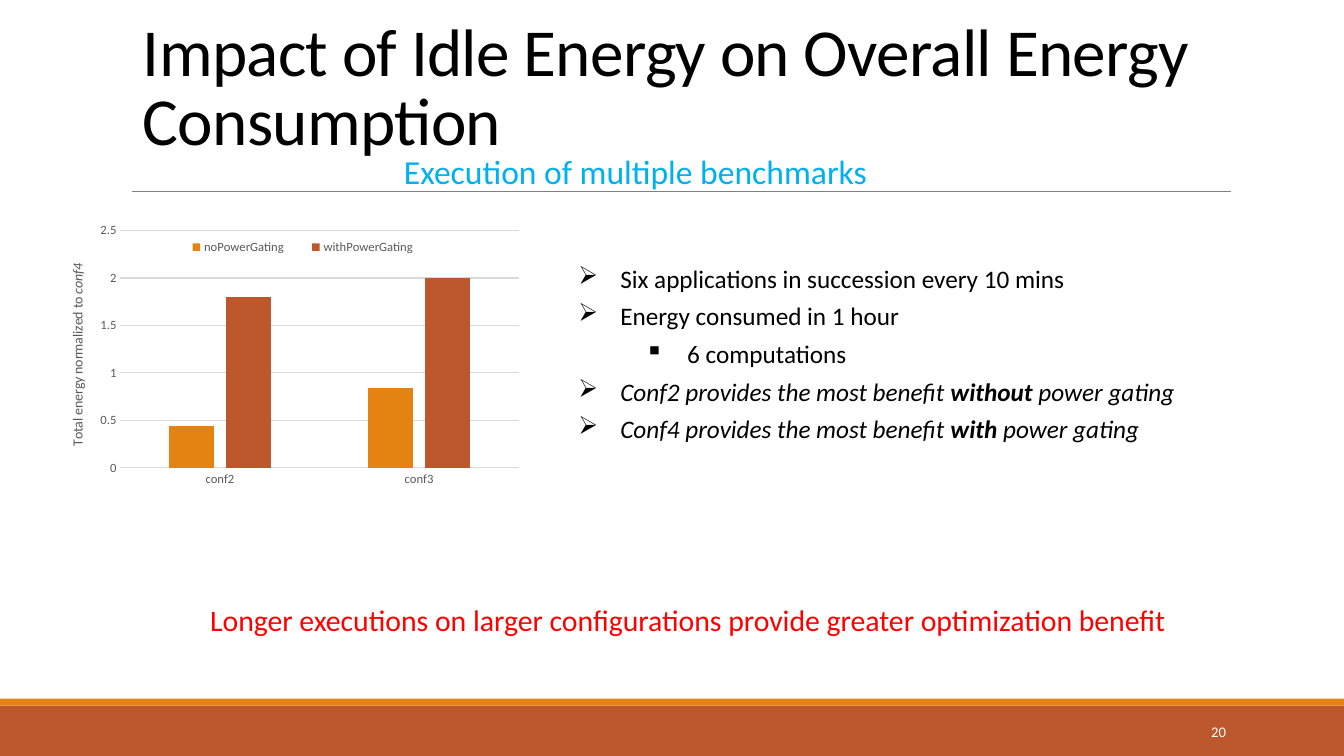
"""Build the slide on idle energy and overall energy consumption."""
from dataclasses import dataclass
from typing import Any, Optional

from lxml.etree import SubElement
from pptx import Presentation
from pptx.chart.data import CategoryChartData
from pptx.dml.color import RGBColor
from pptx.enum.chart import XL_CHART_TYPE as ChartType
from pptx.enum.chart import XL_LEGEND_POSITION as LegendPosition
from pptx.enum.chart import XL_TICK_MARK as TickMark
from pptx.enum.shapes import MSO_CONNECTOR as Connector
from pptx.enum.shapes import MSO_SHAPE as ShapeType
from pptx.enum.text import MSO_ANCHOR as Anchor
from pptx.enum.text import MSO_AUTO_SIZE as AutoSize
from pptx.enum.text import PP_ALIGN as Align
from pptx.oxml.ns import qn
from pptx.util import Pt

FONT = "Calibri"
COLORS = {
    "orange": "E48312", "rust": "BD582C", "rule": "808080", "sky": "00B0F0",
    "black": "000000", "red": "FF0000", "white": "FFFFFF",
    "label": "595959", "grid": "D9D9D9",
}


@dataclass(frozen=True)
class Box:
    left: float
    top: float
    width: float
    height: float

    def lengths(self) -> list:
        return [Pt(value) for value in (self.left, self.top, self.width, self.height)]


@dataclass(frozen=True)
class Band:
    box: Box
    color: str


@dataclass(frozen=True)
class Run:
    text: str
    bold: bool = False
    italic: bool = False


@dataclass(frozen=True)
class Line:
    runs: tuple
    bullet: Optional[str] = None
    indent: float = 30
    level: int = 0
    align: Align = Align.LEFT
    space_after: float = 0
    line_spacing: float = 1.0


@dataclass(frozen=True)
class TextBlock:
    box: Box
    size: float
    color: str
    lines: tuple
    wrap: bool = True
    auto_size: AutoSize = AutoSize.NONE
    anchor: Anchor = Anchor.TOP
    tracking: float = 0


def point(text: str, **formats: Any) -> Line:
    return Line((Run(text),), **{"bullet": "➢", "space_after": 5.3, **formats})


def finding(start: str, stress: str) -> Line:
    runs = (Run(start, italic=True), Run(stress, True, True), Run(" power gating", italic=True))
    return Line(runs, bullet="➢", space_after=5.3)


BANDS = (
    Band(Box(0, 504, 960, 36), "rust"),
    Band(Box(0, 499, 960, 5), "orange"),
)
TEXTS = (
    TextBlock(Box(281.5, 104.4, 348.5, 36), 24, "sky",
              (Line((Run("Execution of multiple benchmarks"),)),),
              wrap=False, auto_size=AutoSize.SHAPE_TO_FIT_TEXT),
    TextBlock(Box(406, 184.3, 472.3, 136.8), 18, "black", (
        point("Six applications in succession every 10 mins"),
        point("Energy consumed in 1 hour"),
        point("6 computations", bullet="▪", indent=77.8, level=1),
        finding("Conf2 provides the most benefit ", "without"),
        finding("Conf4 provides the most benefit ", "with"),
    ), auto_size=AutoSize.SHAPE_TO_FIT_TEXT),
    TextBlock(Box(137.5, 426.2, 707.8, 33.1), 21.3, "red",
              (point("Longer executions on larger configurations provide greater "
                     "optimization benefit", bullet=None, align=Align.CENTER),),
              wrap=False, auto_size=AutoSize.SHAPE_TO_FIT_TEXT),
    TextBlock(Box(95, 77, 865, 40.3), 48, "black",
              (Line((Run("Impact of Idle Energy on Overall Energy Consumption"),),
                    line_spacing=0.85),),
              anchor=Anchor.BOTTOM, tracking=-0.5),
    TextBlock(Box(779.8, 508.3, 103, 28.8), 10.5, "white",
              (Line((Run("20"),), align=Align.RIGHT),), anchor=Anchor.MIDDLE),
)
SERIES = {
    "noPowerGating": ((0.44, 0.84), "orange"),
    "withPowerGating": ((1.8, 2), "rust"),
}


def apply(target: Any, formats: dict) -> None:
    for name, value in formats.items():
        setattr(target, name, value)


def rgb(color: str) -> RGBColor:
    return RGBColor.from_string(COLORS[color])


def style_font(font: Any, size: float, color: str, bold: bool = False, italic: bool = False) -> None:
    apply(font, {"name": FONT, "size": Pt(size), "bold": bold, "italic": italic})
    font.color.rgb = rgb(color)


def style_line(line: Any, color: str, width: float) -> None:
    line.color.rgb = rgb(color)
    line.width = Pt(width)


def draw_band(slide: Any, band: Band) -> None:
    shape = slide.shapes.add_shape(ShapeType.RECTANGLE, *band.box.lengths())
    shape.shadow.inherit = False
    shape.fill.solid()
    shape.fill.fore_color.rgb = rgb(band.color)
    shape.line.fill.background()


def draw_rule(slide: Any) -> None:
    rule = slide.shapes.add_connector(Connector.STRAIGHT, Pt(94.3), Pt(136.8), Pt(879.1), Pt(136.8))
    style_line(rule.line, "rule", 0.5)
    SubElement(rule.element.spPr, qn("a:effectLst"))


def draw_text(slide: Any, block: TextBlock) -> None:
    frame = slide.shapes.add_textbox(*block.box.lengths()).text_frame
    apply(frame, {"word_wrap": block.wrap, "auto_size": block.auto_size,
                  "vertical_anchor": block.anchor})
    for index, line in enumerate(block.lines):
        paragraph = frame.add_paragraph() if index else frame.paragraphs[0]
        apply(paragraph, {"alignment": line.align, "level": line.level,
                          "space_after": Pt(line.space_after),
                          "line_spacing": line.line_spacing})
        if line.bullet:
            properties = paragraph._p.get_or_add_pPr()
            properties.set("marL", str(Pt(line.indent)))
            properties.set("indent", str(Pt(-30)))
            SubElement(properties, qn("a:buChar")).set("char", line.bullet)
        for item in line.runs:
            run = paragraph.add_run()
            run.text = item.text
            style_font(run.font, block.size, block.color, item.bold, item.italic)
            if block.tracking:
                run._r.get_or_add_rPr().set("spc", str(round(block.tracking * 100)))


def place(element: Any, index: int, modes: dict, area: dict) -> None:
    for old in element.findall(qn("c:layout")):
        element.remove(old)
    layout = SubElement(element, qn("c:layout"))
    element.insert(index, layout)
    manual = SubElement(layout, qn("c:manualLayout"))
    for tag, value in {**modes, "xMode": "edge", "yMode": "edge", **area}.items():
        SubElement(manual, qn(f"c:{tag}")).set("val", str(value))


def draw_chart(slide: Any, box: Box) -> None:
    data = CategoryChartData()
    data.categories = ["conf2", "conf3"]
    for name, (values, _) in SERIES.items():
        data.add_series(name, values)
    chart = slide.shapes.add_chart(ChartType.COLUMN_CLUSTERED, *box.lengths(), data).chart
    apply(chart, {"has_title": False, "has_legend": True})
    style_font(chart.font, 10, "black")
    plot = chart.plots[0]
    apply(plot, {"gap_width": 219, "overlap": -27, "vary_by_categories": False})
    for series, (_, color) in zip(plot.series, SERIES.values()):
        series.format.fill.solid()
        series.format.fill.fore_color.rgb = rgb(color)
    for axis in (chart.category_axis, chart.value_axis):
        apply(axis, {"major_tick_mark": TickMark.NONE, "minor_tick_mark": TickMark.NONE})
        style_font(axis.tick_labels.font, 9, "label")
    style_line(chart.category_axis.format.line, "grid", 0.75)
    values = chart.value_axis
    apply(values, {"minimum_scale": 0, "maximum_scale": 2.5, "major_unit": 0.5})
    values.format.line.fill.background()
    style_line(values.major_gridlines.format.line, "grid", 0.75)
    title = values.axis_title.text_frame.paragraphs[0]
    for text, italic in (("Total energy normalized to ", False), ("conf4", True)):
        run = title.add_run()
        run.text = text
        style_font(run.font, 10, "label", italic=italic)
    apply(chart.legend, {"position": LegendPosition.TOP, "include_in_layout": True})
    style_font(chart.legend.font, 9, "label")
    place(chart.element.find(f".//{qn('c:plotArea')}"), 0, {"layoutTarget": "inner"},
          {"x": 0.15, "y": 0.05, "w": 0.83, "h": 0.86})
    place(chart.element.find(f".//{qn('c:legend')}"), 1, {},
          {"x": 0.25, "y": 0.07, "w": 0.56, "h": 0.08})


def main() -> None:
    presentation = Presentation()
    apply(presentation, {"slide_width": Pt(960), "slide_height": Pt(540)})
    slide = presentation.slides.add_slide(presentation.slide_layouts[6])
    for band in BANDS:
        draw_band(slide, band)
    draw_rule(slide)
    draw_chart(slide, Box(34.6, 154.8, 342.7, 197.3))
    for block in TEXTS:
        draw_text(slide, block)
    presentation.save("out.pptx")


if __name__ == "__main__":
    main()
